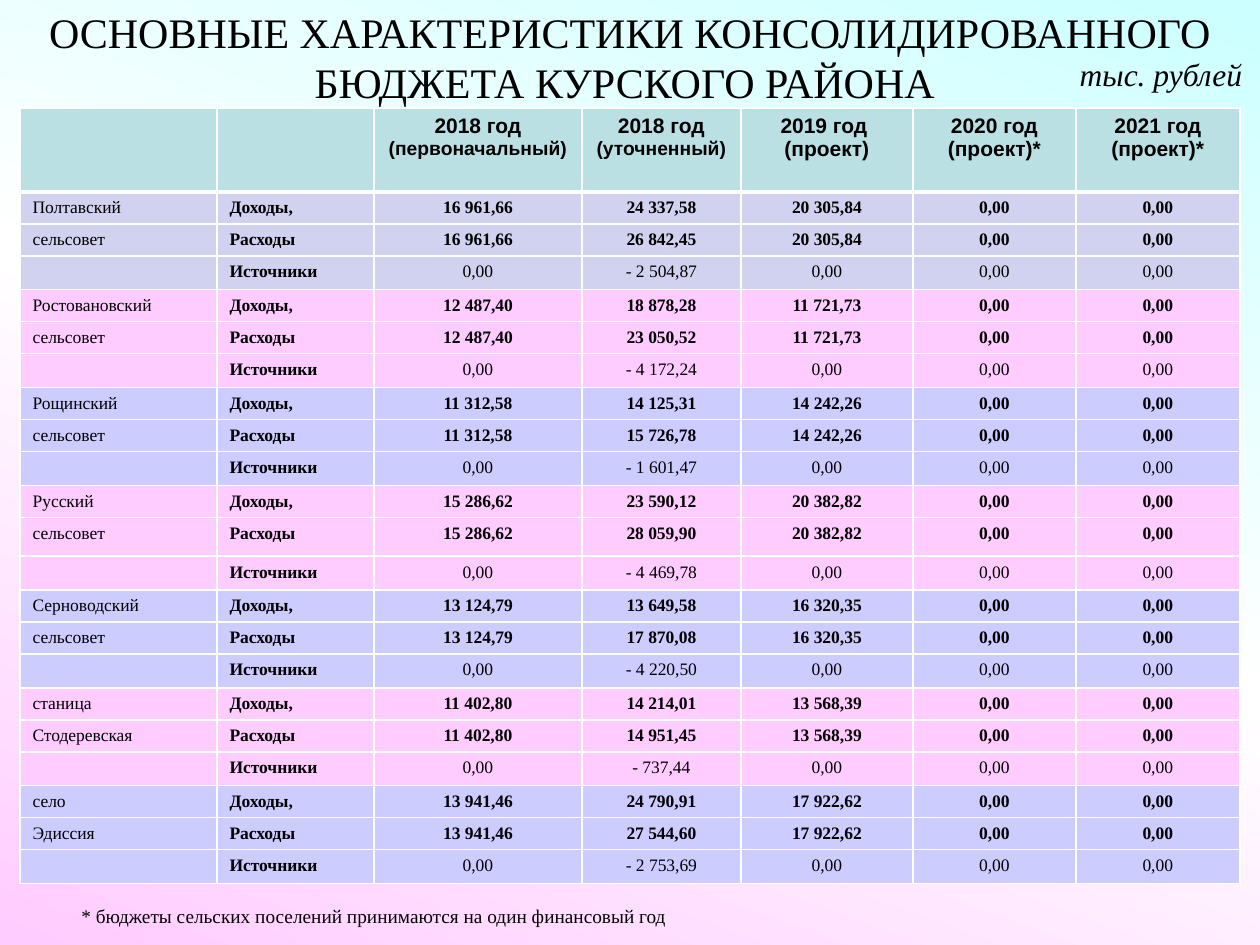
from copy import deepcopy
from pptx import Presentation
from pptx.dml.color import RGBColor
from pptx.enum.text import PP_ALIGN as Align
from pptx.oxml import parse_xml
from pptx.oxml.ns import nsdecls
from pptx.util import Pt

PX = 914400 // 126
SERIF, SANS = "Times New Roman", "Arial"
COLORS = {
    "text": "000000", "border": "FFFFFF", "header": "BBE0E3",
    "gray": "D1D1F0", "pink": "FFCCFF", "blue": "CCCCFF",
}
BACKGROUND = [(0, "CCFFFF"), (0.5, "FFFFFF"), (1, "FFCCFF")]

TITLE = "ОСНОВНЫЕ ХАРАКТЕРИСТИКИ КОНСОЛИДИРОВАННОГО БЮДЖЕТА КУРСКОГО РАЙОНА "
UNITS = "тыс. рублей"
FOOTNOTE = "* бюджеты сельских поселений принимаются на один финансовый год"

HEADERS = [
    [],
    [],
    [[("2018 год ", 12), ("(первоначальный)", 11)]],
    [[("2018 год ", 12), ("(уточненный)", 11)]],
    [[("2019 год ", 12)], [("(проект)", 12)]],
    [[("2020 год (проект)*", 12)]],
    [[("2021 год (проект)*", 12)]],
]
MEASURES = ["Доходы,", "Расходы", "Источники"]
ZERO = "0,00"
SETTLEMENTS = [
    ("Полтавский", "сельсовет", "gray", "16 961,66",
     ("24 337,58", "26 842,45", "- 2 504,87"), "20 305,84"),
    ("Ростовановский", "сельсовет", "pink", "12 487,40",
     ("18 878,28", "23 050,52", "- 4 172,24"), "11 721,73"),
    ("Рощинский", "сельсовет", "blue", "11 312,58",
     ("14 125,31", "15 726,78", "- 1 601,47"), "14 242,26"),
    ("Русский", "сельсовет", "pink", "15 286,62",
     ("23 590,12", "28 059,90", "- 4 469,78"), "20 382,82"),
    ("Серноводский", "сельсовет", "blue", "13 124,79",
     ("13 649,58", "17 870,08", "- 4 220,50"), "16 320,35"),
    ("станица", "Стодеревская", "pink", "11 402,80",
     ("14 214,01", "14 951,45", "- 737,44"), "13 568,39"),
    ("село", "Эдиссия", "blue", "13 941,46",
     ("24 790,91", "27 544,60", "- 2 753,69"), "17 922,62"),
]
TABLE_LEFT, TABLE_TOP = 20, 108
COLUMN_WIDTHS = [197, 157, 208, 159, 172, 163, 164]
HEADER_HEIGHT, ROW_HEIGHT, TALL_ROW, TALL_HEIGHT = 84, 31, 11, 39


def add_run(paragraph, text, size, font=SERIF, bold=False, italic=False):
    run = paragraph.add_run()
    run.text = text
    run.font.size = Pt(size)
    run.font.name = font
    run.font.bold = bold
    run.font.italic = italic
    run.font.color.rgb = RGBColor.from_string(COLORS["text"])


def add_text(slide, box, text, size, align, italic=False):
    shape = slide.shapes.add_textbox(*(value * PX for value in box))
    shape.text_frame.word_wrap = True
    paragraph = shape.text_frame.paragraphs[0]
    paragraph.alignment = align
    add_run(paragraph, text, size, italic=italic)


def style_cell(cell, color, bottom=1):
    properties = cell._tc.get_or_add_tcPr()
    for side, width in (("L", 1), ("R", 1), ("T", 1), ("B", bottom)):
        properties.append(parse_xml(
            f'<a:ln{side} {nsdecls("a")} w="{Pt(width)}"><a:solidFill>'
            f'<a:srgbClr val="{COLORS["border"]}"/></a:solidFill></a:ln{side}>'))
    cell.fill.solid()
    cell.fill.fore_color.rgb = RGBColor.from_string(COLORS[color])


def fill_cell(cell, paragraphs, font, bold, align):
    frame = cell.text_frame
    for index, runs in enumerate(paragraphs):
        paragraph = frame.add_paragraph() if index else frame.paragraphs[0]
        paragraph.alignment = align
        for text, size in runs:
            add_run(paragraph, text, size, font, bold)
    if not paragraphs:
        frame.paragraphs[0]._p.append(
            parse_xml(f'<a:endParaRPr {nsdecls("a")} sz="1000"/>'))


def paint_background(slide):
    fill = slide.background.fill
    fill.gradient()
    fill.gradient_angle = 250
    stop_list = slide._element.xpath(".//a:gsLst")[0]
    stop_list.append(deepcopy(stop_list[0]))
    for stop, (position, color) in zip(fill.gradient_stops, BACKGROUND):
        stop.position = position
        stop.color.rgb = RGBColor.from_string(color)


def body_rows():
    for first, second, color, initial, revised, project in SETTLEMENTS:
        for index, (name, measure) in enumerate(zip((first, second, ""), MEASURES)):
            balance = index == 2
            yield color, balance, [
                name, measure, ZERO if balance else initial, revised[index],
                ZERO if balance else project, ZERO, ZERO]


def add_budget_table(slide):
    heights = [HEADER_HEIGHT] + [ROW_HEIGHT] * len(SETTLEMENTS) * len(MEASURES)
    heights[TALL_ROW] = TALL_HEIGHT
    table = slide.shapes.add_table(
        len(heights), len(COLUMN_WIDTHS), TABLE_LEFT * PX, TABLE_TOP * PX,
        sum(COLUMN_WIDTHS) * PX, sum(heights) * PX).table
    table.horz_banding = False
    for column, width in zip(table.columns, COLUMN_WIDTHS):
        column.width = width * PX
    for row, height in zip(table.rows, heights):
        row.height = height * PX
    for column, paragraphs in enumerate(HEADERS):
        cell = table.cell(0, column)
        style_cell(cell, "header", 3)
        fill_cell(cell, paragraphs, SANS, True, Align.CENTER)
    for row, (color, balance, values) in enumerate(body_rows(), 1):
        for column, text in enumerate(values):
            cell = table.cell(row, column)
            style_cell(cell, color)
            bold = column == 1 or (column > 1 and not balance)
            align = Align.CENTER if column > 1 else Align.LEFT
            fill_cell(cell, [[(text, 10)]] if text else [], SERIF, bold, align)


def main():
    presentation = Presentation()
    presentation.slide_width = 1260 * PX
    presentation.slide_height = 945 * PX
    slide = presentation.slides.add_slide(presentation.slide_layouts[6])
    paint_background(slide)
    add_budget_table(slide)
    add_text(slide, (0, 0, 1260, 115), TITLE, 24, Align.CENTER)
    add_text(slide, (1062, 49, 198, 50), UNITS, 18, Align.CENTER, italic=True)
    add_text(slide, (69, 898, 1074, 37), FOOTNOTE, 11, Align.LEFT)
    presentation.save("out.pptx")


if __name__ == "__main__":
    main()
